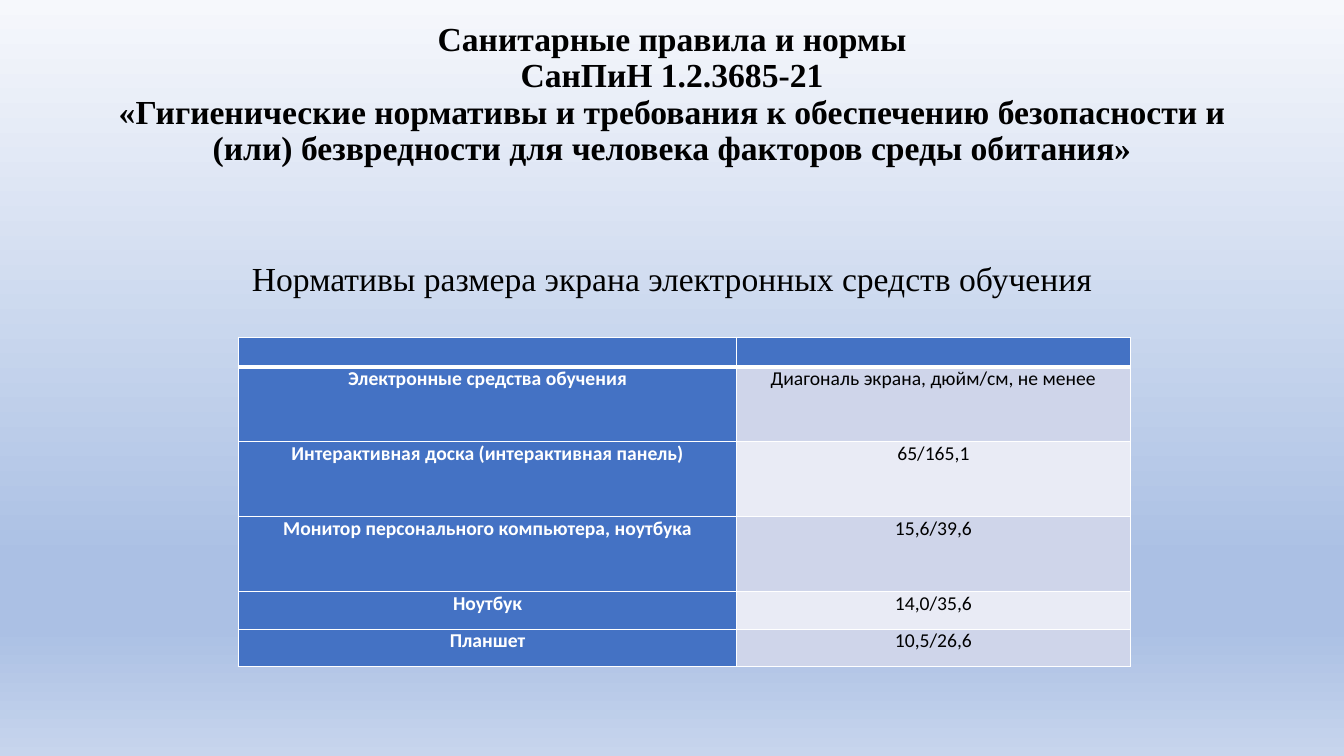
from lxml.etree import SubElement
from pptx import Presentation
from pptx.dml.color import RGBColor
from pptx.enum.text import MSO_ANCHOR, MSO_AUTO_SIZE, PP_ALIGN
from pptx.oxml.ns import qn
from pptx.util import Pt

BLACK = RGBColor(0x00, 0x00, 0x00)
WHITE = RGBColor(0xFF, 0xFF, 0xFF)
BLUE = RGBColor(0x44, 0x72, 0xC4)
BANDS = RGBColor(0xCF, 0xD5, 0xEA), RGBColor(0xE9, 0xEB, 0xF5)
SKY = [
    (0, RGBColor(0xF6, 0xF8, 0xFC)),
    (74, RGBColor(0xAB, 0xC0, 0xE4)),
    (83, RGBColor(0xAB, 0xC0, 0xE4)),
    (100, RGBColor(0xC7, 0xD5, 0xED)),
]

HEADING = (
    "Санитарные правила и нормы\v"
    "СанПиН 1.2.3685-21\v"
    "«Гигиенические нормативы и требования к обеспечению безопасности и "
    "(или) безвредности для человека факторов среды обитания»"
)
SUBHEADING = "Нормативы размера экрана электронных средств обучения"
SCREEN_SIZES = [
    ("", ""),
    ("Электронные средства обучения", "Диагональ экрана, дюйм/см, не менее"),
    ("Интерактивная доска (интерактивная панель)", "65/165,1"),
    ("Монитор персонального компьютера, ноутбука", "15,6/39,6"),
    ("Ноутбук", "14,0/35,6"),
    ("Планшет", "10,5/26,6"),
]
ROW_HEIGHTS = [21, 53.6, 53.6, 53.6, 26.7, 26.7]
COLUMN_WIDTHS = [356, 281]


class ScreenNormsSlide:
    """Holds the fonts and the current slide, and draws each kind of element."""

    serif = "Times New Roman"
    sans = "Calibri"
    heading_size = 24
    cell_size = 14

    def __init__(self, deck):
        self.slide = deck.slides.add_slide(deck.slide_layouts[5])

    def background(self, stops):
        fill = self.slide.background.fill
        fill.gradient()
        fill.gradient_angle = 270
        stop_list = next(self.slide.element.iter(qn("a:gsLst")))
        stop_list.clear()
        for percent, color in stops:
            stop = SubElement(stop_list, qn("a:gs"), pos=str(percent * 1000))
            SubElement(stop, qn("a:srgbClr"), val=str(color))

    def format_text(self, frame, font, size, color, bold):
        for paragraph in frame.paragraphs:
            paragraph.alignment = PP_ALIGN.CENTER
            for run in paragraph.runs:
                run.font.name = font
                run.font.size = Pt(size)
                run.font.color.rgb = color
                run.font.bold = bold

    def fill_frame(self, frame, text, anchor, bold):
        frame.word_wrap = True
        frame.auto_size = MSO_AUTO_SIZE.NONE
        frame.vertical_anchor = anchor
        frame.text = text
        frame.paragraphs[0].line_spacing = 0.9
        self.format_text(frame, self.serif, self.heading_size, BLACK, bold)

    def title(self, text, left, top, width, height):
        heading = self.slide.shapes.title
        heading.left, heading.top = Pt(left), Pt(top)
        heading.width, heading.height = Pt(width), Pt(height)
        self.fill_frame(heading.text_frame, text, MSO_ANCHOR.MIDDLE, True)
        heading.text_frame.margin_bottom = Pt(29.6)

    def text(self, text, left, top, width, height):
        subheading = self.slide.shapes.add_textbox(Pt(left), Pt(top), Pt(width), Pt(height))
        self.fill_frame(subheading.text_frame, text, MSO_ANCHOR.TOP, False)
        subheading.text_frame.margin_top = Pt(44)

    def borders(self, cell, top, bottom):
        properties = cell._tc.get_or_add_tcPr()
        for side, width in (("L", 1), ("R", 1), ("T", top), ("B", bottom)):
            line = SubElement(properties, qn(f"a:ln{side}"), w=str(Pt(width)))
            paint = SubElement(line, qn("a:solidFill"))
            SubElement(paint, qn("a:srgbClr"), val=str(WHITE))

    def cell(self, cell, text, row, column):
        self.borders(cell, 3 if row == 1 else 1, 3 if row == 0 else 1)
        is_label = row == 0 or column == 0
        cell.fill.solid()
        cell.fill.fore_color.rgb = BLUE if is_label else BANDS[(row - 1) % 2]
        cell.margin_top = cell.margin_bottom = 0
        cell.text_frame.text = text
        color = WHITE if is_label else BLACK
        self.format_text(cell.text_frame, self.sans, self.cell_size, color, is_label)
        if not text:
            empty_line = cell.text_frame.paragraphs[0]._p
            SubElement(empty_line, qn("a:endParaRPr"), sz=str(self.cell_size * 100))

    def table(self, rows, left, top, widths, heights):
        norms = self.slide.shapes.add_table(
            len(rows), len(widths), Pt(left), Pt(top), Pt(sum(widths)), Pt(sum(heights))
        ).table
        for column, width in zip(norms.columns, widths):
            column.width = Pt(width)
        for row, height in zip(norms.rows, heights):
            row.height = Pt(height)
        for r, texts in enumerate(rows):
            for c, text in enumerate(texts):
                self.cell(norms.cell(r, c), text, r, c)


def main():
    deck = Presentation()
    deck.slide_width, deck.slide_height = Pt(960), Pt(540)
    page = ScreenNormsSlide(deck)
    page.background(SKY)
    page.title(HEADING, 66, 28.75, 828, 104.4)
    page.text(SUBHEADING, 66, 143.75, 828, 342.6)
    page.table(SCREEN_SIZES, 170.3, 241, COLUMN_WIDTHS, ROW_HEIGHTS)
    deck.save("out.pptx")


if __name__ == "__main__":
    main()
